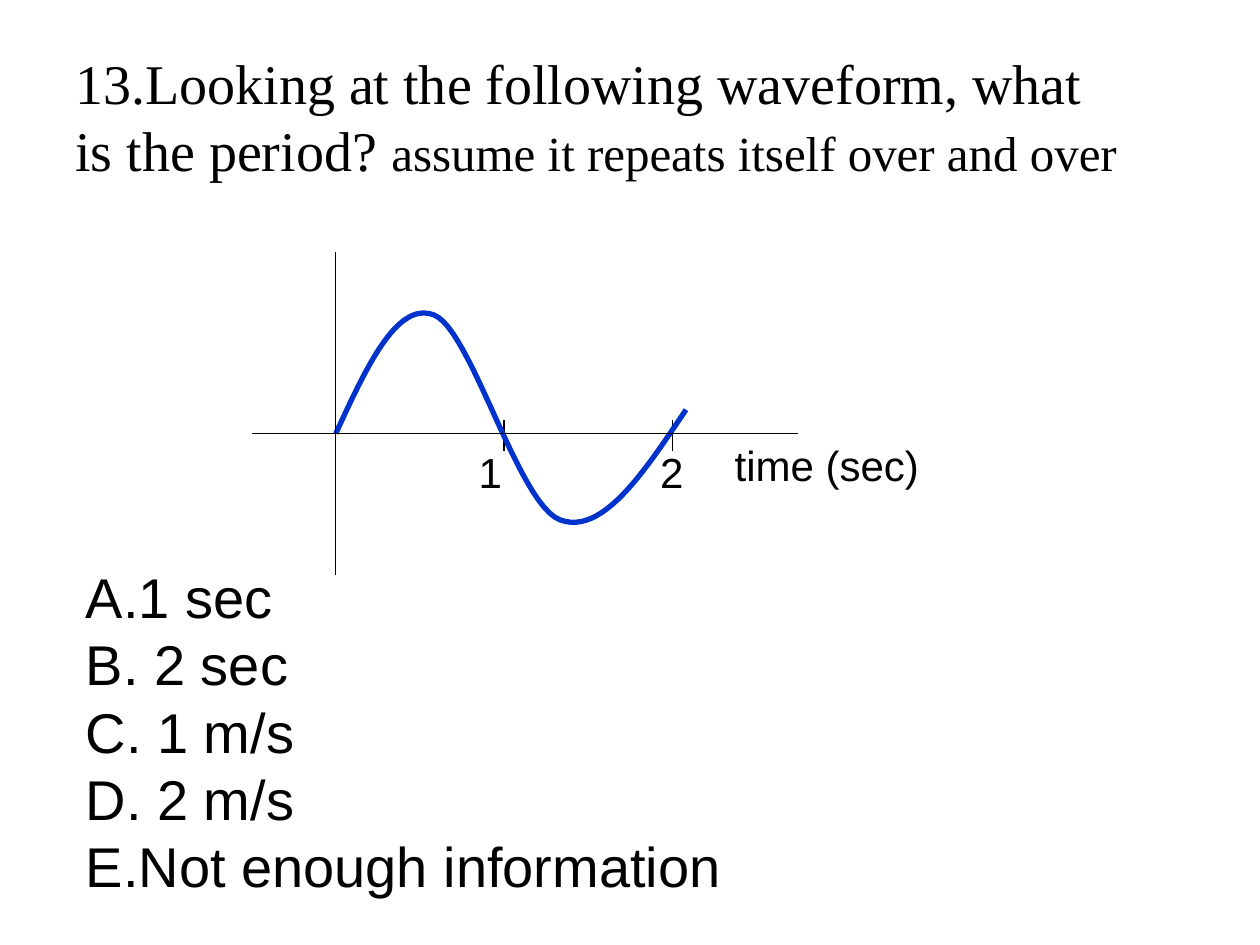
from lxml.etree import SubElement
from pptx import Presentation
from pptx.dml.color import RGBColor
from pptx.enum.shapes import MSO_CONNECTOR
from pptx.enum.text import MSO_AUTO_SIZE
from pptx.oxml.ns import qn
from pptx.util import Cm, Pt

BLACK = "000000"
BLUE = "0033CC"
ORIGIN_X, AXIS_Y = 6.77, 8.74
SECOND = 3.39
CURVE_STEPS = 24
WAVE_START = (ORIGIN_X, AXIS_Y)
# Each Bezier segment: two control points and an end point, in cm.
WAVE_SEGMENTS = [
    ((7.39, 7.4), (8, 6.06), (8.75, 6.35)),
    ((9.5, 6.64), (10.44, 10.16), (11.29, 10.48)),
    ((12.14, 10.8), (12.98, 9.53), (13.83, 8.26)),
]
ANSWERS = ["1 sec", " 2 sec", " 1 m/s", " 2 m/s", "Not enough information"]


def color(value):
    return RGBColor.from_string(value)


def add_span(para, text, size, font="Arial"):
    span = para.add_run()
    span.text = text
    span.font.size = Pt(size)
    span.font.name = font
    span.font.color.rgb = color(BLACK)


def add_box(page, left, top, width, height, wrap=True):
    box = page.shapes.add_textbox(Cm(left), Cm(top), Cm(width), Cm(height))
    box.text_frame.word_wrap = wrap
    return box.text_frame


def add_question(page):
    para = add_box(page, 1.27, 0.85, 21.59, 5.08).paragraphs[0]
    para.space_before = Pt(6.4)
    add_span(para, "13.Looking at the following waveform, what is the period? ",
             32, "Times New Roman")
    add_span(para, "assume it repeats itself over and over",
             28, "Times New Roman")


def add_line(page, x1, y1, x2, y2):
    line = page.shapes.add_connector(
        MSO_CONNECTOR.STRAIGHT, Cm(x1), Cm(y1), Cm(x2), Cm(y2))
    line.line.color.rgb = color(BLACK)
    line.line.width = Pt(0.75)
    SubElement(line._element.spPr, qn("a:effectLst"))


def bezier_point(points, t):
    weights = ((1 - t) ** 3, 3 * t * (1 - t) ** 2, 3 * t ** 2 * (1 - t), t ** 3)
    return tuple(sum(weight * point[axis] for weight, point in zip(weights, points))
                 for axis in (0, 1))


def add_wave(page):
    vertices = []
    start = WAVE_START
    for segment in WAVE_SEGMENTS:
        points = (start, *segment)
        for step in range(1, CURVE_STEPS + 1):
            x, y = bezier_point(points, step / CURVE_STEPS)
            vertices.append((Cm(x), Cm(y)))
        start = segment[-1]
    builder = page.shapes.build_freeform(Cm(WAVE_START[0]), Cm(WAVE_START[1]))
    builder.add_line_segments(vertices, close=False)
    wave = builder.convert_to_shape()
    wave.shadow.inherit = False
    wave.fill.background()
    wave.line.color.rgb = color(BLUE)
    wave.line.width = Pt(3)


def add_label(page, text, left, top, width):
    frame = add_box(page, left, top, width, 1.27, wrap=False)
    frame.auto_size = MSO_AUTO_SIZE.SHAPE_TO_FIT_TEXT
    add_span(frame.paragraphs[0], text, 24)


def add_answers(page):
    frame = add_box(page, 1.48, 11.22, 13.55, 7.04)
    frame.auto_size = MSO_AUTO_SIZE.SHAPE_TO_FIT_TEXT
    for index, answer in enumerate(ANSWERS):
        para = frame.add_paragraph() if index else frame.paragraphs[0]
        properties = para._p.get_or_add_pPr()
        properties.set("marL", str(Cm(0.95)))
        properties.set("indent", str(-Cm(0.95)))
        SubElement(properties, qn("a:buFont"), typeface="Arial")
        SubElement(properties, qn("a:buAutoNum"), type="alphaUcPeriod")
        add_span(para, answer, 32)


def main():
    deck = Presentation()
    deck.slide_width, deck.slide_height = Cm(25.4), Cm(19.05)
    page = deck.slides.add_slide(deck.slide_layouts[6])

    add_question(page)
    for second in (1, 2):
        x = ORIGIN_X + second * SECOND
        add_line(page, x, 8.47, x, 9.1)
    add_wave(page)
    add_line(page, 5.08, AXIS_Y, 16.09, AXIS_Y)
    add_line(page, ORIGIN_X, 5.08, ORIGIN_X, 11.59)
    add_label(page, "time (sec)", 14.56, 8.74, 4.22)
    add_label(page, "1", 9.4, 8.87, 0.98)
    add_label(page, "2", 13.06, 8.87, 0.98)
    add_answers(page)

    deck.save("out.pptx")


if __name__ == "__main__":
    main()
